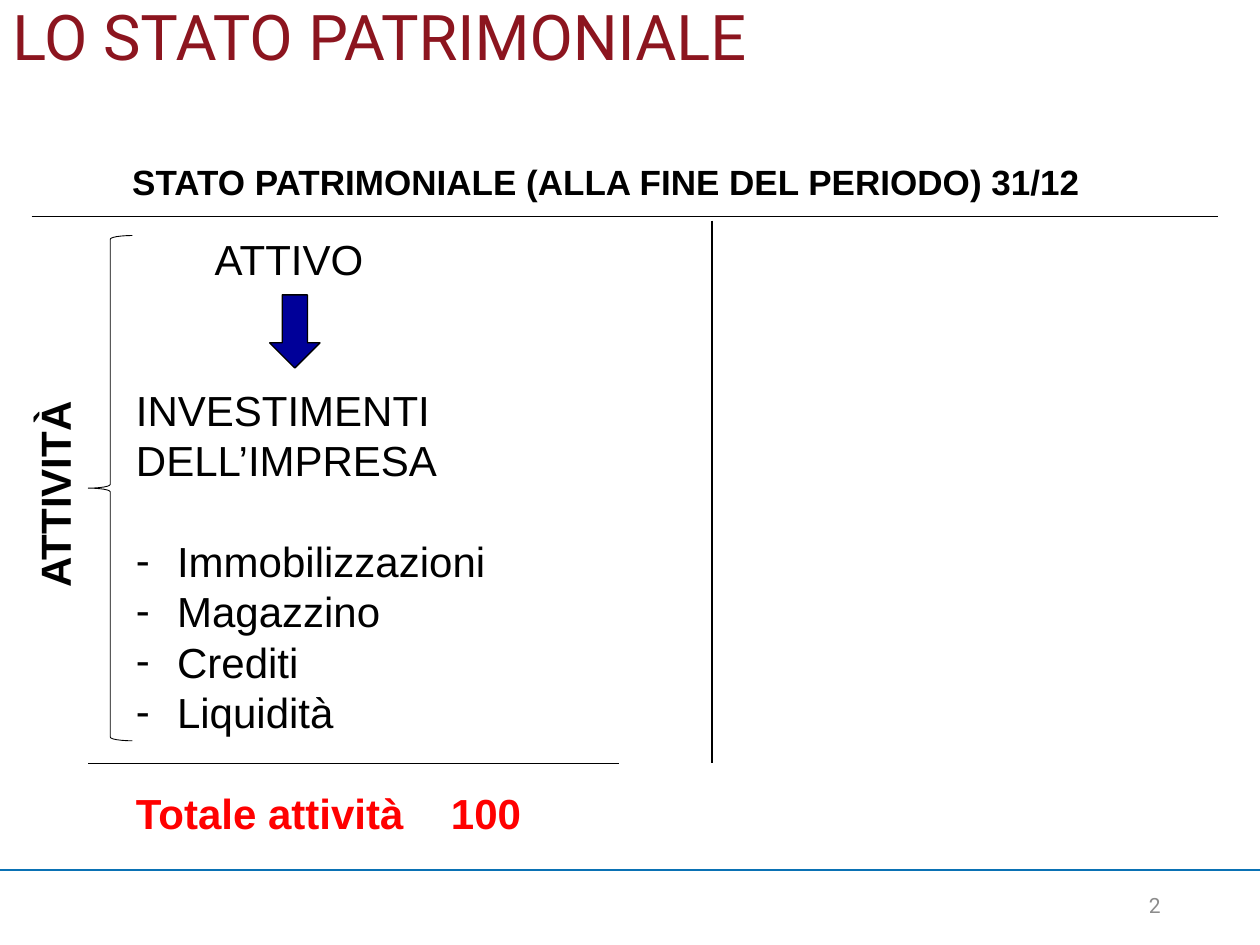
from dataclasses import dataclass

from lxml.etree import SubElement
from pptx import Presentation
from pptx.dml.color import RGBColor as Rgb
from pptx.enum.shapes import MSO_CONNECTOR as Connector, MSO_SHAPE as Shape
from pptx.enum.text import MSO_ANCHOR as Anchor, MSO_AUTO_SIZE as AutoSize, PP_ALIGN as Align
from pptx.oxml.ns import qn
from pptx.util import Pt


@dataclass(frozen=True)
class Theme:
    body_font: str = "Arial"
    heading_font: str = "Roboto"
    heading_size: float = 36
    title_size: float = 20
    body_size: float = 24
    number_size: float = 12
    line_pitch: float = 28.8
    black: str = "000000"
    crimson: str = "8C151F"
    red: str = "FF0000"
    navy: str = "000099"
    blue: str = "0A71B4"
    grey: str = "8C8C8C"


class BalanceSlide:
    def __init__(self, deck, theme):
        self.theme = theme
        self.slide = deck.slides.add_slide(deck.slide_layouts[5])

    def style_text(self, paragraph, text, size=None, font=None, color=None, bold=False,
                   align=Align.LEFT, spacing=None, before=0):
        paragraph.text = text
        paragraph.alignment = align
        paragraph.space_before = Pt(before)
        if spacing:
            paragraph.line_spacing = spacing
        for run in paragraph.runs:
            run.font.size = Pt(size or self.theme.body_size)
            run.font.name = font or self.theme.body_font
            run.font.bold = bold
            run.font.color.rgb = Rgb.from_string(color or self.theme.black)

    def title(self, box, text, **style):
        title = self.slide.shapes.title
        title.left, title.top, title.width, title.height = map(Pt, box)
        frame = title.text_frame
        frame.word_wrap = True
        frame.auto_size = AutoSize.NONE
        frame.vertical_anchor = Anchor.MIDDLE
        self.style_text(frame.paragraphs[0], text, **style)

    def frame(self, box):
        frame = self.slide.shapes.add_textbox(*map(Pt, box)).text_frame
        frame.word_wrap = True
        return frame

    def label(self, box, text, vertical=False, **style):
        frame = self.frame(box)
        if vertical:
            frame._txBody.bodyPr.set("vert", "vert270")
        self.style_text(frame.paragraphs[0], text, **style)

    def entry(self, frame, text, indent=0, bullet=None, tab=None, **style):
        first = frame.paragraphs[0]
        paragraph = frame.add_paragraph() if first.runs else first
        self.style_text(paragraph, text, spacing=Pt(self.theme.line_pitch), **style)
        properties = paragraph._p.get_or_add_pPr()
        properties.set("marL", str(Pt(indent)))
        properties.set("indent", str(Pt(-indent if bullet else 0)))
        if bullet:
            SubElement(properties, qn("a:buFont"), typeface=self.theme.body_font)
            SubElement(properties, qn("a:buChar"), char=bullet)
        if tab:
            tabs = SubElement(properties, qn("a:tabLst"))
            SubElement(tabs, qn("a:tab"), pos=str(Pt(tab)), algn="l")

    def rule(self, start, end, width, color=None):
        rule = self.slide.shapes.add_connector(Connector.STRAIGHT, *map(Pt, start + end))
        rule.line.width = Pt(width)
        rule.line.color.rgb = Rgb.from_string(color or self.theme.black)
        SubElement(rule._element.spPr, qn("a:effectLst"))

    def symbol(self, kind, box, width, fill=None):
        symbol = self.slide.shapes.add_shape(kind, *map(Pt, box))
        symbol.shadow.inherit = False
        symbol.line.width = Pt(width)
        symbol.line.color.rgb = Rgb.from_string(self.theme.black)
        if fill:
            symbol.fill.solid()
            symbol.fill.fore_color.rgb = Rgb.from_string(fill)
        else:
            symbol.fill.background()


def main():
    theme = Theme()
    deck = Presentation()
    deck.slide_width, deck.slide_height = Pt(720), Pt(540)
    sheet = BalanceSlide(deck, theme)

    sheet.rule((0, 497.2), (720, 497.2), 1.5, theme.blue)
    sheet.rule((18, 123.8), (696, 123.8), 0.75)
    sheet.rule((406.8, 126), (406.8, 436.3), 0.75)

    assets = sheet.frame((70.6, 129.6, 329.8, 356.4))
    sheet.entry(assets, "ATTIVO", indent=45)
    sheet.entry(assets, "INVESTIMENTI DELL’IMPRESA", before=2 * theme.line_pitch)
    for position, asset in enumerate(("Immobilizzazioni", "Magazzino", "Crediti", "Liquidità")):
        sheet.entry(assets, asset, indent=23.5, bullet="-",
                    before=0 if position else theme.line_pitch)
    sheet.entry(assets, "Totale attività\t100", tab=259.5, before=theme.line_pitch,
                color=theme.red, bold=True)

    sheet.symbol(Shape.DOWN_ARROW, (154.1, 168.5, 28.8, 41.8), 0.75, theme.navy)
    sheet.title((22.3, 60.5, 648, 90), "STATO PATRIMONIALE (ALLA FINE DEL PERIODO) 31/12",
                size=theme.title_size, bold=True, align=Align.CENTER, spacing=0.9)
    sheet.label((0, 0, 720, 80), "LO STATO PATRIMONIALE", size=theme.heading_size,
                font=theme.heading_font, color=theme.crimson, spacing=0.9)
    sheet.symbol(Shape.LEFT_BRACE, (50.4, 134.6, 25.2, 288.7), 0.5)
    sheet.label((13, 168.5, 43.9, 174.2), "ATTIVITÀ", vertical=True, bold=True)
    sheet.rule((50.4, 436.3), (353.5, 436.3), 0.5)
    sheet.label((508.3, 506.2, 162, 28.8), "2", size=theme.number_size,
                font=theme.heading_font, color=theme.grey, align=Align.RIGHT)

    deck.save("out.pptx")


if __name__ == "__main__":
    main()
